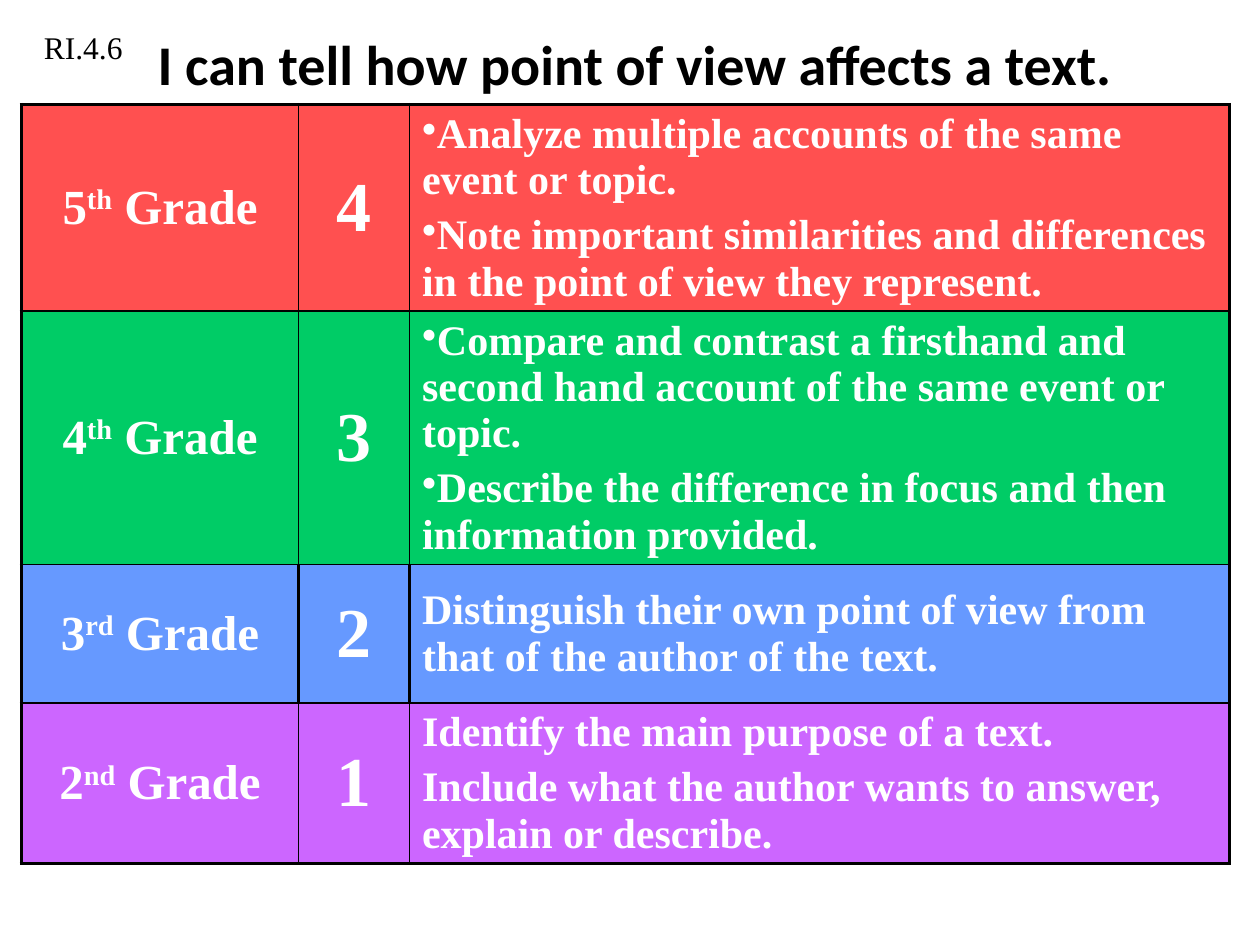
from lxml.etree import SubElement
from pptx import Presentation
from pptx.dml.color import RGBColor
from pptx.enum.text import MSO_ANCHOR, PP_ALIGN
from pptx.oxml.ns import qn
from pptx.util import Inches, Pt

RED = RGBColor(0xFF, 0x50, 0x50)
GREEN = RGBColor(0x00, 0xCC, 0x66)
BLUE = RGBColor(0x66, 0x99, 0xFF)
PURPLE = RGBColor(0xCC, 0x66, 0xFF)
WHITE = RGBColor(0xFF, 0xFF, 0xFF)
BLACK = RGBColor(0x00, 0x00, 0x00)

WIDTHS = [2.2, 0.88, 6.51]
HEIGHTS = [1.1, 1.3, 1.1, 1.1]
RULES = [2.25, 1.5, 1, 1, 1.5]
INNER = [1, 1, 1.5, 1]
GRADES = [
    ("5", "th", "4", RED, True, [
        "Analyze multiple accounts of the same event or topic.",
        "Note important similarities and differences in the point of view they represent."]),
    ("4", "th", "3", GREEN, True, [
        "Compare and contrast a firsthand and second hand account of the same event or topic.",
        "Describe the difference in focus and then information provided."]),
    ("3", "rd", "2", BLUE, False, [
        "Distinguish their own point of view from that of the author of the text."]),
    ("2", "nd", "1", PURPLE, False, [
        "Identify the main purpose of a text.",
        "Include what the author wants to answer, explain or describe."]),
]


class Deck:
    """Holds the style and the current slide."""

    def __init__(self):
        self.prs = Presentation()
        self.prs.slide_width, self.prs.slide_height = Inches(10), Inches(7.5)
        self.slide = self.prs.slides.add_slide(self.prs.slide_layouts[5])
        self.head, self.body = "Calibri", "Times New Roman"

    def font(self, para, size, color, bold=True, name=None):
        font = para.font
        font.name, font.size, font.bold = name or self.body, Pt(size), bold
        font.color.rgb = color

    def title(self, text, left, top, width, height):
        shape = self.slide.shapes.title
        shape.left, shape.top = Inches(left), Inches(top)
        shape.width, shape.height = Inches(width), Inches(height)
        frame = shape.text_frame
        frame.text, frame.vertical_anchor = text, MSO_ANCHOR.MIDDLE
        frame.paragraphs[0].alignment = PP_ALIGN.CENTER
        self.font(frame.paragraphs[0], 32, BLACK, name=self.head)

    def label(self, text, left, top, width, height):
        box = self.slide.shapes.add_textbox(
            Inches(left), Inches(top), Inches(width), Inches(height))
        box.text_frame.word_wrap = True
        box.text_frame.text = text
        self.font(box.text_frame.paragraphs[0], 18, BLACK, False)

    def table(self, left, top, widths, heights):
        table = self.slide.shapes.add_table(
            len(heights), len(widths), Inches(left), Inches(top),
            Inches(sum(widths)), Inches(sum(heights))).table
        table.first_row = table.horz_banding = False
        for col, width in zip(table.columns, widths):
            col.width = Inches(width)
        for row, height in zip(table.rows, heights):
            row.height = Inches(height)
        return table

    def cell(self, cell, paras, size, fill, edges, center=False, bullet=False):
        props = cell._tc.get_or_add_tcPr()
        for side, width in zip("LRTB", edges):
            line = SubElement(props, qn(f"a:ln{side}"), w=str(Pt(width)))
            paint = SubElement(line, qn("a:solidFill"))
            SubElement(paint, qn("a:srgbClr"), val=str(BLACK))
        cell.fill.solid()
        cell.fill.fore_color.rgb = fill
        cell.vertical_anchor = MSO_ANCHOR.MIDDLE
        for index, parts in enumerate(paras):
            frame = cell.text_frame
            para = frame.add_paragraph() if index else frame.paragraphs[0]
            para.alignment = PP_ALIGN.CENTER if center else PP_ALIGN.LEFT
            space = SubElement(para._p.get_or_add_pPr(), qn("a:spcBef"))
            SubElement(space, qn("a:spcPct"), val="20000")
            if bullet:
                SubElement(para._p.pPr, qn("a:buChar"), char="•")
            self.font(para, size, WHITE)
            for place, text in enumerate(parts):
                run = para.add_run()
                run.text = text
                if place == 1:
                    run._r.get_or_add_rPr().set("baseline", "30000")


def main():
    deck = Deck()
    deck.title("I can tell how point of view affects a text.", 0.33, 0, 9.42, 1)
    table = deck.table(0.17, 0.83, WIDTHS, HEIGHTS)
    for row, (grade, suffix, score, fill, bullet, goals) in enumerate(GRADES):
        cols = [2.25, INNER[row], INNER[row], 2.25]
        edges = [cols[i:i + 2] + RULES[row:row + 2] for i in range(3)]
        deck.cell(table.cell(row, 0), [[grade, suffix, " Grade"]], 28, fill, edges[0], True)
        deck.cell(table.cell(row, 1), [[score]], 40, fill, edges[1], True)
        deck.cell(table.cell(row, 2), [[goal] for goal in goals], 24, fill,
                  edges[2], bullet=bullet)
    deck.label("RI.4.6", 0.25, 0.17, 1.42, 0.4)
    deck.prs.save("out.pptx")


if __name__ == "__main__":
    main()
